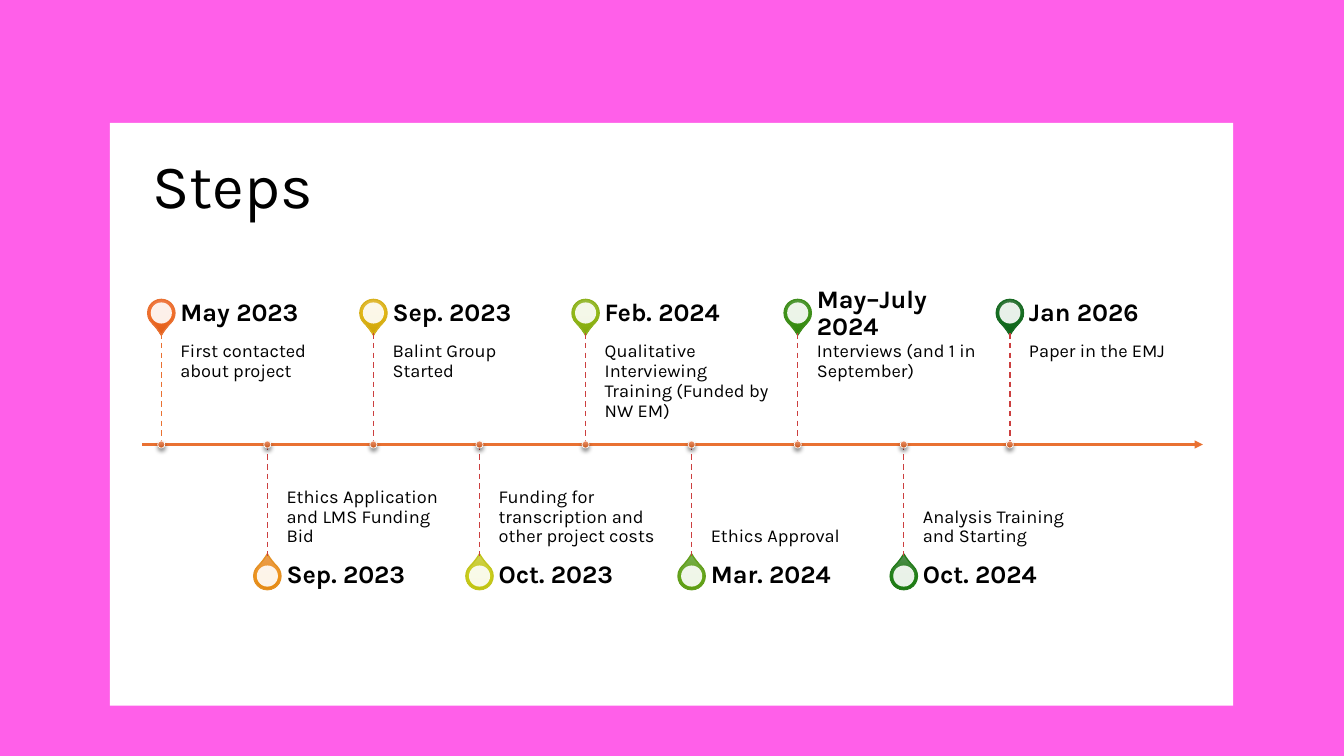
from dataclasses import dataclass

import lxml.etree
import pptx
import pptx.dml.color
import pptx.enum.dml
import pptx.enum.shapes
import pptx.enum.text
import pptx.oxml.ns
import pptx.util

Inches = pptx.util.Inches
Pt = pptx.util.Pt
qn = pptx.oxml.ns.qn
Anchor = pptx.enum.text.MSO_ANCHOR
Shape = pptx.enum.shapes.MSO_SHAPE

FONT = "Karla"
COLORS = {
    "background": "FF5FE9",
    "panel": "FFFFFF",
    "text": "000000",
    "axis": "E97132",
    "stem": "CC3F3F",
    "dot light": "EE9167",
    "dot dark": "C4581F",
}

# Timeline grid: ten columns along the axis, one row of text on each side
AXIS_LEFT, AXIS_RIGHT, AXIS_Y = 1.41, 11.93, 4.41
COLUMN = (AXIS_RIGHT - AXIS_LEFT) / 10
FIRST_STEP_X = 1.6
DETAIL_ROW, DATE_ROW = 1.105, 0.39
TEXT_GAP, TEXT_WIDTH = 0.19, 1.73
PIN_OFFSET = 1.305
PIN_SIZE, HOLE_SIZE, DOT_SIZE = 0.27, 0.21, 0.07


@dataclass(frozen=True)
class Step:
    date: str
    detail: str
    gradient: tuple[str, str, str]
    outline: str
    stem: str = COLORS["stem"]


STEPS = [
    Step("May 2023", "First contacted about project",
         ("ED8257", "F26E29", "E25F1A"), "E97132", COLORS["axis"]),
    Step("Sep. 2023", "Ethics Application and LMS Funding Bid",
         ("E99D51", "EE921A", "DE840D"), "E49124"),
    Step("Sep. 2023", "Balint Group Started",
         ("E1BC4E", "E1B614", "D0A70A"), "D8B11D"),
    Step("Oct. 2023", "Funding for transcription and other project costs",
         ("CCCF4E", "CACD15", "BBBE0C"), "C2C51E"),
    Step("Feb. 2024", "Qualitative Interviewing Training (Funded by NW EM)",
         ("9CBD4E", "92B916", "85AB0D"), "8EB21E"),
    Step("Mar. 2024", "Ethics Approval",
         ("77AC4E", "64A617", "59990E"), "639F1D"),
    Step("May–July 2024", "Interviews (and 1 in September)",
         ("5E9C4E", "3E9317", "35880F"), "408E1C"),
    Step("Oct. 2024", "Analysis Training and Starting",
         ("508C4E", "208116", "18770F"), "247C1B"),
    Step("Jan 2026", "Paper in the EMJ",
         ("4D7E50", "156F21", "0F661B"), "196B24"),
]


def rgb(color: str) -> pptx.dml.color.RGBColor:
    return pptx.dml.color.RGBColor.from_string(color)


def add_node(parent, tag: str, **attributes: str):
    return lxml.etree.SubElement(parent, qn(tag), attributes)


def add_centred(slide, kind, x: float, y: float, size: float):
    shape = slide.shapes.add_shape(
        kind, Inches(x - size / 2), Inches(y - size / 2), Inches(size), Inches(size))
    shape.shadow.inherit = False
    return shape


def fill_downward(shape, colors: tuple[str, ...]) -> None:
    """Fill with evenly spaced stops from top to bottom, whatever the rotation."""
    shape.fill.gradient()
    gradient = shape._element.spPr.find(qn("a:gradFill"))
    gradient.set("rotWithShape", "0")
    gradient.find(qn("a:lin")).set("ang", "5400000")
    stops = gradient.find(qn("a:gsLst"))
    for stop in list(stops):
        stops.remove(stop)
    for index, color in enumerate(colors):
        position = 100000 * index // (len(colors) - 1)
        add_node(add_node(stops, "a:gs", pos=str(position)), "a:srgbClr", val=color)


def set_line(line, color: str, width: float) -> None:
    line.color.rgb = rgb(color)
    line.width = Pt(width)


def add_line(slide, start: tuple[float, float], end: tuple[float, float],
             color: str, width: float):
    line = slide.shapes.add_connector(
        pptx.enum.shapes.MSO_CONNECTOR.STRAIGHT, *map(Inches, start + end))
    set_line(line.line, color, width)
    add_node(line._element.spPr, "a:effectLst")
    return line


def write(frame, text: str, size: float, anchor, bold: bool = False) -> None:
    frame.word_wrap = True
    frame.auto_size = pptx.enum.text.MSO_AUTO_SIZE.NONE
    frame.vertical_anchor = anchor
    paragraph = frame.paragraphs[0]
    paragraph.alignment = pptx.enum.text.PP_ALIGN.LEFT
    paragraph.line_spacing = 0.9
    run = paragraph.add_run()
    run.text = text
    run.font.name = FONT
    run.font.size = Pt(size)
    run.font.bold = bold
    run.font.color.rgb = rgb(COLORS["text"])


def add_label(slide, x: float, y: float, height: float,
              insets: tuple[float, float, float, float]):
    """Add a text box with left, top, right and bottom insets; return its frame."""
    box = slide.shapes.add_textbox(
        Inches(x), Inches(y), Inches(TEXT_WIDTH), Inches(height))
    frame = box.text_frame
    (frame.margin_left, frame.margin_top,
     frame.margin_right, frame.margin_bottom) = map(Inches, insets)
    return frame


def add_pin(slide, step: Step, x: float, y: float, above: bool) -> None:
    pin = add_centred(slide, Shape.TEAR, x, y, PIN_SIZE)
    pin.adjustments[0] = 1.15
    pin.rotation = 135 if above else 315
    fill_downward(pin, step.gradient)
    set_line(pin.line, step.outline, 1)
    hole = add_centred(slide, Shape.OVAL, x, y, HOLE_SIZE)
    hole.fill.solid()
    hole.fill.fore_color.rgb = rgb(COLORS["panel"])
    hole.line.fill.background()
    add_node(hole._element.spPr.find(qn("a:solidFill"))[0], "a:alpha", val="90000")


def add_dot(slide, x: float) -> None:
    dot = add_centred(slide, Shape.OVAL, x, AXIS_Y, DOT_SIZE)
    fill_downward(dot, (COLORS["dot light"], COLORS["dot dark"]))
    set_line(dot.line, COLORS["panel"], 0.5)
    shadow = add_node(dot._element.spPr.find(qn("a:effectLst")), "a:outerShdw",
                      blurRad=str(Pt(3)), dist=str(Pt(2)), dir="5400000",
                      rotWithShape="0")
    color = add_node(shadow, "a:srgbClr", val=COLORS["text"])
    add_node(color, "a:alpha", val="45000")


def add_step(slide, step: Step, x: float, above: bool) -> None:
    side = -1 if above else 1
    text_x = x + TEXT_GAP
    stem_end = AXIS_Y + side * DETAIL_ROW
    add_pin(slide, step, x, AXIS_Y + side * PIN_OFFSET, above)

    insets = (0, 0.09, 0.09, 0.14) if above else (0, 0.14, 0, 0.09)
    detail = add_label(slide, text_x, min(AXIS_Y, stem_end), DETAIL_ROW, insets)
    write(detail, step.detail, 13, Anchor.TOP if above else Anchor.BOTTOM)
    date_y = stem_end - DATE_ROW if above else stem_end
    date = add_label(slide, text_x, date_y, DATE_ROW, (0, 0, 0.12, 0))
    write(date, step.date, 18, Anchor.MIDDLE, bold=True)

    stem = add_line(slide, (x, min(AXIS_Y, stem_end)), (x, max(AXIS_Y, stem_end)),
                    step.stem, 1)
    stem.line.dash_style = pptx.enum.dml.MSO_LINE.DASH
    add_dot(slide, x)


def main() -> None:
    deck = pptx.Presentation()
    deck.slide_width, deck.slide_height = Inches(13.33), Inches(7.5)
    slide = deck.slides.add_slide(deck.slide_layouts[5])
    slide.background.fill.solid()
    slide.background.fill.fore_color.rgb = rgb(COLORS["background"])

    panel = slide.shapes.add_shape(
        Shape.RECTANGLE, *map(Inches, (1.09, 1.22, 11.14, 5.78)))
    panel.shadow.inherit = False
    panel.fill.solid()
    panel.fill.fore_color.rgb = rgb(COLORS["panel"])
    panel.line.fill.background()

    heading = slide.shapes.title
    heading._element.addprevious(panel._element)
    heading.left, heading.top, heading.width, heading.height = map(
        Inches, (1.41, 1.49, 9.58, 0.77))
    write(heading.text_frame, "Steps", 44, Anchor.MIDDLE)

    axis = add_line(slide, (AXIS_LEFT, AXIS_Y), (AXIS_RIGHT, AXIS_Y),
                    COLORS["axis"], 1.5)
    add_node(axis.line._get_or_add_ln(), "a:tailEnd", type="triangle")
    for index, step in enumerate(STEPS):
        add_step(slide, step, FIRST_STEP_X + index * COLUMN, above=index % 2 == 0)

    deck.save("out.pptx")


if __name__ == "__main__":
    main()
